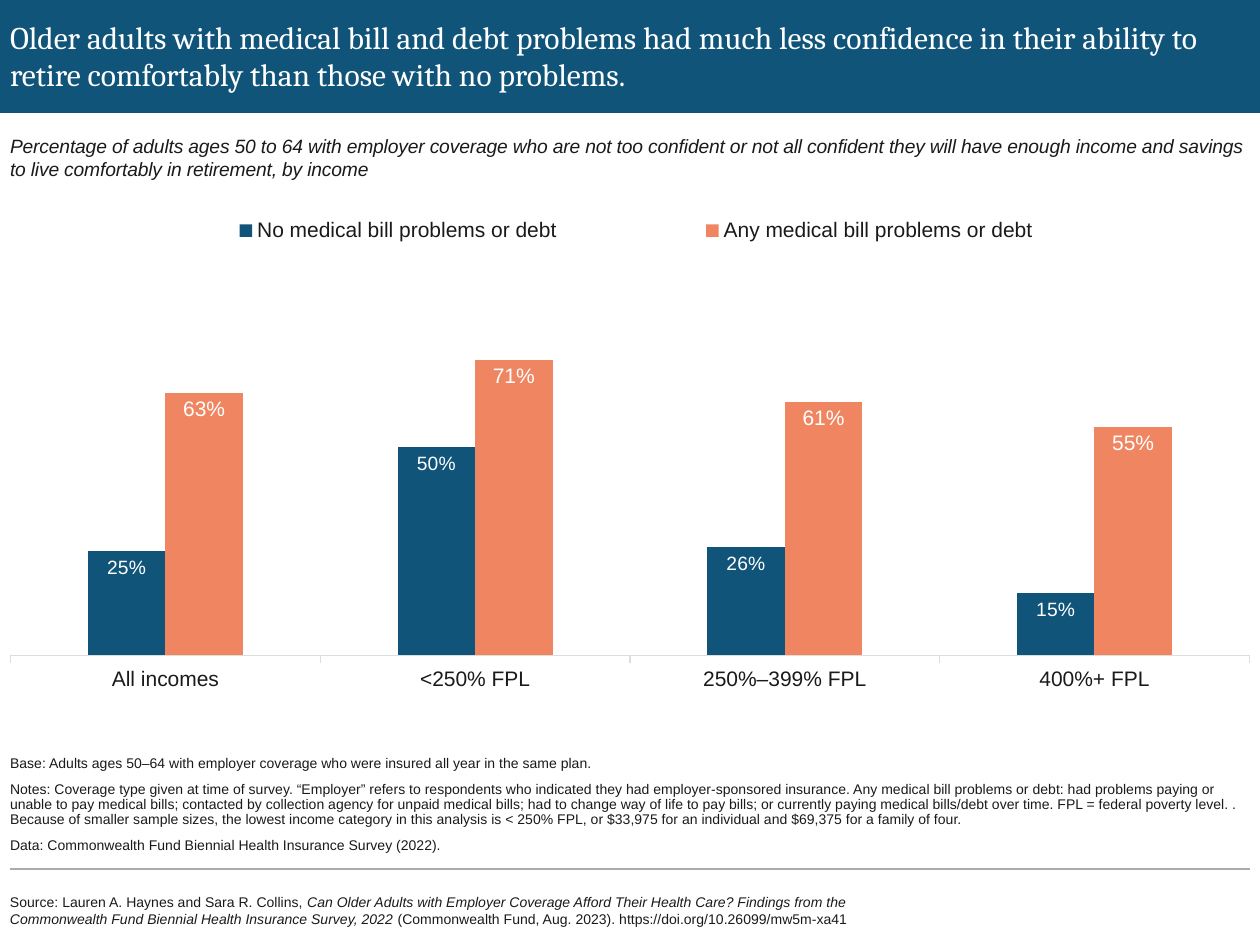
from lxml.etree import SubElement
from pptx import Presentation
from pptx.chart.data import CategoryChartData
from pptx.dml.color import RGBColor
from pptx.enum.chart import XL_CHART_TYPE, XL_LABEL_POSITION, XL_LEGEND_POSITION, XL_TICK_MARK
from pptx.enum.shapes import MSO_CONNECTOR, MSO_SHAPE
from pptx.enum.text import MSO_ANCHOR
from pptx.oxml import parse_xml
from pptx.oxml.ns import nsdecls, qn
from pptx.util import Emu, Pt

SLIDE_WIDTH, SLIDE_HEIGHT = 1260, 945
MARGIN = 10
CONTENT_WIDTH = SLIDE_WIDTH - 2 * MARGIN
NAVY, CORAL, INK, WHITE = "115479", "F08661", "1A1A1A", "FFFFFF"
RULE_GREY, AXIS_GREY = "ABABAB", "DDDDDD"

TITLE = ("Older adults with medical bill and debt problems had much less confidence "
         "in their ability to retire comfortably than those with no problems.")
SUBTITLE = ("Percentage of adults ages 50 to 64 with employer coverage who are not too confident "
            "or not all confident they will have enough income and savings to live comfortably "
            "in retirement, by income")
NOTES = [
    "Base: Adults ages 50–64 with employer coverage who were insured all year in the same plan.",
    "Notes: Coverage type given at time of survey. “Employer” refers to respondents who indicated "
    "they had employer-sponsored insurance. Any medical bill problems or debt: had problems paying "
    "or unable to pay medical bills; contacted by collection agency for unpaid medical bills; had to "
    "change way of life to pay bills; or currently paying medical bills/debt over time. FPL = federal "
    "poverty level. . Because of smaller sample sizes, the lowest income category in this analysis is "
    "< 250% FPL, or $33,975 for an individual and $69,375 for a family of four.",
    "Data: Commonwealth Fund Biennial Health Insurance Survey (2022).",
]
SOURCE_LINES = [
    [("Source: Lauren A. Haynes and Sara R. Collins, ", False),
     ("Can Older Adults with Employer Coverage Afford Their Health Care? Findings from the ", True)],
    [("Commonwealth Fund Biennial Health Insurance Survey, 2022", True),
     (" (Commonwealth Fund, Aug. 2023). https://doi.org/10.26099/mw5m-xa41", False)],
]
CATEGORIES = ["All incomes", "<250% FPL", "250%–399% FPL", "400%+ FPL"]
SERIES = [
    ("No medical bill problems or debt", [0.25, 0.50, 0.26, 0.15], NAVY, 11),
    ("Any medical bill problems or debt", [0.63, 0.71, 0.61, 0.55], CORAL, 12),
]


def px(value):
    return Emu(round(value * 914400 / 126))


def color(hex_string):
    return RGBColor.from_string(hex_string)


def apply(target, **values):
    for name, value in values.items():
        setattr(target, name, value)


def style_font(font, size, hex_string=INK, name="Arial", italic=False):
    apply(font, size=Pt(size), name=name, italic=italic, bold=False)
    font.color.rgb = color(hex_string)


def add_text_frame(slide, box, anchor):
    text_frame = slide.shapes.add_textbox(*map(px, box)).text_frame
    apply(text_frame, word_wrap=True, vertical_anchor=anchor,
          margin_left=0, margin_top=0, margin_right=0, margin_bottom=0)
    return text_frame


def add_run(paragraph, text, size, **font_values):
    run = paragraph.add_run()
    run.text = text
    style_font(run.font, size, **font_values)
    return run


def add_title_band(slide, box):
    left, top, width, height = box
    band = slide.shapes.add_shape(MSO_SHAPE.RECTANGLE, *map(px, box))
    band.shadow.inherit = False
    band.fill.solid()
    band.fill.fore_color.rgb = color(NAVY)
    band.line.fill.background()
    title_box = (left + MARGIN, top - 1, width - 2 * MARGIN, height)
    text_frame = add_text_frame(slide, title_box, MSO_ANCHOR.MIDDLE)
    add_run(text_frame.paragraphs[0], TITLE, 18, hex_string=WHITE, name="Cambria")


def add_subtitle(slide, box):
    text_frame = add_text_frame(slide, box, MSO_ANCHOR.TOP)
    run = add_run(text_frame.paragraphs[0], SUBTITLE, 11, italic=True)
    run.font._element.set("spc", "-10")


def set_layout(element, x, y, width, height, inner=False):
    for old_layout in element.findall(qn("c:layout")):
        element.remove(old_layout)
    layout = parse_xml(f"<c:layout {nsdecls('c')}><c:manualLayout/></c:layout>")
    values = {"layoutTarget": "inner"} if inner else {}
    values |= {"xMode": "edge", "yMode": "edge", "x": x, "y": y, "w": width, "h": height}
    for name, value in values.items():
        SubElement(layout[0], qn(f"c:{name}")).set("val", str(value))
    return layout


def add_confidence_chart(slide, box):
    chart_data = CategoryChartData(number_format="0%")
    chart_data.categories = CATEGORIES
    for name, values, _, _ in SERIES:
        chart_data.add_series(name, values)
    chart = slide.shapes.add_chart(
        XL_CHART_TYPE.COLUMN_CLUSTERED, *map(px, box), chart_data).chart
    apply(chart, has_title=False, has_legend=True)
    style_font(chart.font, 10)

    apply(chart.legend, position=XL_LEGEND_POSITION.RIGHT, include_in_layout=False)
    style_font(chart.legend.font, 12)
    legend = chart.legend._element
    legend_layout = set_layout(legend, 0.07, 0.06, 0.87, 0.08)
    legend.find(qn("c:legendPos")).addnext(legend_layout)
    plot_area = chart._chartSpace.chart.plotArea
    plot_area.insert(0, set_layout(plot_area, 0, 0.116, 1, 0.733, inner=True))

    apply(chart.value_axis, visible=False, has_major_gridlines=False,
          minimum_scale=0, maximum_scale=1)
    apply(chart.category_axis, major_tick_mark=XL_TICK_MARK.OUTSIDE,
          minor_tick_mark=XL_TICK_MARK.NONE, has_major_gridlines=False)
    style_font(chart.category_axis.tick_labels.font, 12)
    axis_line = chart.category_axis.format.line
    axis_line.width = Pt(0.75)
    axis_line.color.rgb = color(AXIS_GREY)

    plot = chart.plots[0]
    apply(plot, gap_width=200, overlap=0, vary_by_categories=False)
    for series, (_, _, fill_color, label_size) in zip(plot.series, SERIES):
        series.format.fill.solid()
        series.format.fill.fore_color.rgb = color(fill_color)
        labels = series.data_labels
        apply(labels, show_value=True, position=XL_LABEL_POSITION.INSIDE_END,
              number_format="0%", number_format_is_linked=False)
        style_font(labels.font, label_size, WHITE)


def add_notes(slide, box):
    text_frame = add_text_frame(slide, box, MSO_ANCHOR.BOTTOM)
    for index, text in enumerate(NOTES):
        paragraph = text_frame.add_paragraph() if index else text_frame.paragraphs[0]
        apply(paragraph, line_spacing=0.9, space_after=Pt(6))
        add_run(paragraph, text, 8)


def add_source(slide, box):
    left, top, width, height = box
    rule = slide.shapes.add_connector(
        MSO_CONNECTOR.STRAIGHT, px(left), px(top), px(left + width), px(top))
    rule.line.width = Pt(0.75)
    rule.line.color.rgb = color(RULE_GREY)
    SubElement(rule._element.spPr, qn("a:effectLst"))
    text_box = (left, top + 12, 983, height - 12)
    paragraph = add_text_frame(slide, text_box, MSO_ANCHOR.MIDDLE).paragraphs[0]
    for index, line in enumerate(SOURCE_LINES):
        if index:
            paragraph.add_line_break()
        for text, italic in line:
            add_run(paragraph, text, 8, italic=italic)


def main():
    presentation = Presentation()
    apply(presentation, slide_width=px(SLIDE_WIDTH), slide_height=px(SLIDE_HEIGHT))
    slide = presentation.slides.add_slide(presentation.slide_layouts[6])
    add_title_band(slide, (0, 0, SLIDE_WIDTH, 113))
    add_subtitle(slide, (MARGIN, 134, CONTENT_WIDTH, 40))
    add_confidence_chart(slide, (MARGIN, 174, CONTENT_WIDTH, 567))
    add_notes(slide, (MARGIN, 785, CONTENT_WIDTH, 68))
    add_source(slide, (MARGIN, 869, CONTENT_WIDTH, 70))
    presentation.save("out.pptx")


if __name__ == "__main__":
    main()
